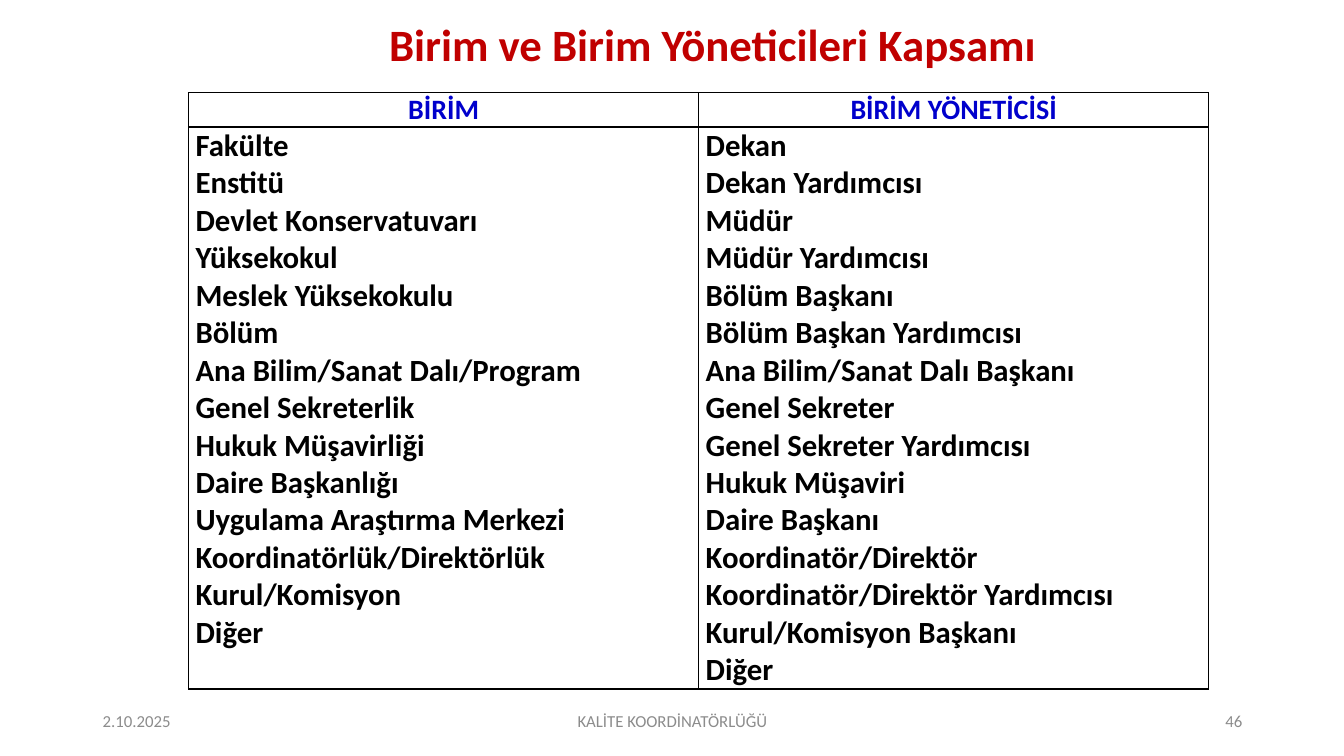
from lxml import etree
from pptx import Presentation
from pptx.dml.color import RGBColor
from pptx.enum.text import MSO_ANCHOR, PP_ALIGN
from pptx.oxml.ns import qn
from pptx.util import Inches, Pt

LEFT, CENTER, RIGHT = PP_ALIGN.LEFT, PP_ALIGN.CENTER, PP_ALIGN.RIGHT
MIDDLE = MSO_ANCHOR.MIDDLE
RED = RGBColor(0xC0, 0x00, 0x00)
BLUE = RGBColor(0x00, 0x00, 0xCC)
BLACK = RGBColor(0x00, 0x00, 0x00)
GRAY = RGBColor(0x8C, 0x8C, 0x8C)

HEADINGS = ["BİRİM", "BİRİM YÖNETİCİSİ"]
UNITS = [
    "Fakülte", "Enstitü", "Devlet Konservatuvarı", "Yüksekokul",
    "Meslek Yüksekokulu", "Bölüm", "Ana Bilim/Sanat Dalı/Program",
    "Genel Sekreterlik", "Hukuk Müşavirliği", "Daire Başkanlığı",
    "Uygulama Araştırma Merkezi", "Koordinatörlük/Direktörlük",
    "Kurul/Komisyon", "Diğer",
]
MANAGERS = [
    "Dekan", "Dekan Yardımcısı", "Müdür", "Müdür Yardımcısı",
    "Bölüm Başkanı", "Bölüm Başkan Yardımcısı",
    "Ana Bilim/Sanat Dalı Başkanı", "Genel Sekreter",
    "Genel Sekreter Yardımcısı", "Hukuk Müşaviri", "Daire Başkanı",
    "Koordinatör/Direktör", "Koordinatör/Direktör Yardımcısı",
    "Kurul/Komisyon Başkanı", "Diğer",
]
FOOTERS = [
    ("2.10.2025", 0.92, 3, LEFT),
    ("KALİTE KOORDİNATÖRLÜĞÜ", 4.42, 4.5, CENTER),
    ("46", 9.42, 3, RIGHT),
]


class SlideBuilder:
    """Holds the text style and the current slide."""

    font_name = "Calibri"

    def __init__(self, page):
        self.page = page

    def fill_text(self, frame, lines, size, color, bold, align):
        frame.text = "\n".join(lines)
        for para in frame.paragraphs:
            para.alignment = align
            for span in para.runs:
                font = span.font
                font.name, font.size, font.bold = self.font_name, Pt(size), bold
                font.color.rgb = color

    def place(self, shape, left, top, width, height):
        shape.left, shape.top = Inches(left), Inches(top)
        shape.width, shape.height = Inches(width), Inches(height)

    def title(self, text, *bounds):
        title = self.page.shapes.title
        self.place(title, *bounds)
        frame = title.text_frame
        frame.vertical_anchor = MIDDLE
        self.fill_text(frame, [text], 32, RED, True, CENTER)
        frame.paragraphs[0].line_spacing = 0.9

    def footer(self, text, left, width, align):
        box = self.page.shapes.add_textbox(
            Inches(left), Inches(6.95), Inches(width), Inches(0.4))
        frame = box.text_frame
        frame.word_wrap = True
        frame.vertical_anchor = MIDDLE
        self.fill_text(frame, [text], 12, GRAY, False, align)

    def border(self, cell):
        properties = cell._tc.get_or_add_tcPr()
        for position, side in enumerate(("a:lnL", "a:lnR", "a:lnT", "a:lnB")):
            line = etree.Element(qn(side), w=str(Pt(1)))
            fill = etree.SubElement(line, qn("a:solidFill"))
            etree.SubElement(fill, qn("a:srgbClr"), val=str(BLACK))
            properties.insert(position, line)

    def cell(self, cell, lines, size, color, align):
        cell.margin_left = cell.margin_right = Inches(0.07)
        cell.margin_top = cell.margin_bottom = 0
        cell.fill.background()
        self.border(cell)
        self.fill_text(cell.text_frame, lines, size, color, True, align)

    def table(self, headings, columns, left, top, column_width, row_heights):
        table = self.page.shapes.add_table(
            len(row_heights), len(columns), Inches(left), Inches(top),
            Inches(column_width * len(columns)), Inches(sum(row_heights))).table
        table.first_row = table.horz_banding = False
        for row, height in zip(table.rows, row_heights):
            row.height = Inches(height)
        for index, (heading, lines) in enumerate(zip(headings, columns)):
            table.columns[index].width = Inches(column_width)
            self.cell(table.cell(0, index), [heading], 20, BLUE, CENTER)
            self.cell(table.cell(1, index), lines, 22, BLACK, LEFT)


def main():
    deck = Presentation()
    deck.slide_width, deck.slide_height = Inches(13.33), Inches(7.5)
    builder = SlideBuilder(deck.slides.add_slide(deck.slide_layouts[5]))
    builder.title("Birim ve Birim Yöneticileri Kapsamı", 0.8, 0.18, 12.54, 0.58)
    builder.table(HEADINGS, [UNITS, MANAGERS], 1.87, 0.92, 5.06, [0.33, 5.48])
    for footer in FOOTERS:
        builder.footer(*footer)
    deck.save("out.pptx")


if __name__ == "__main__":
    main()
